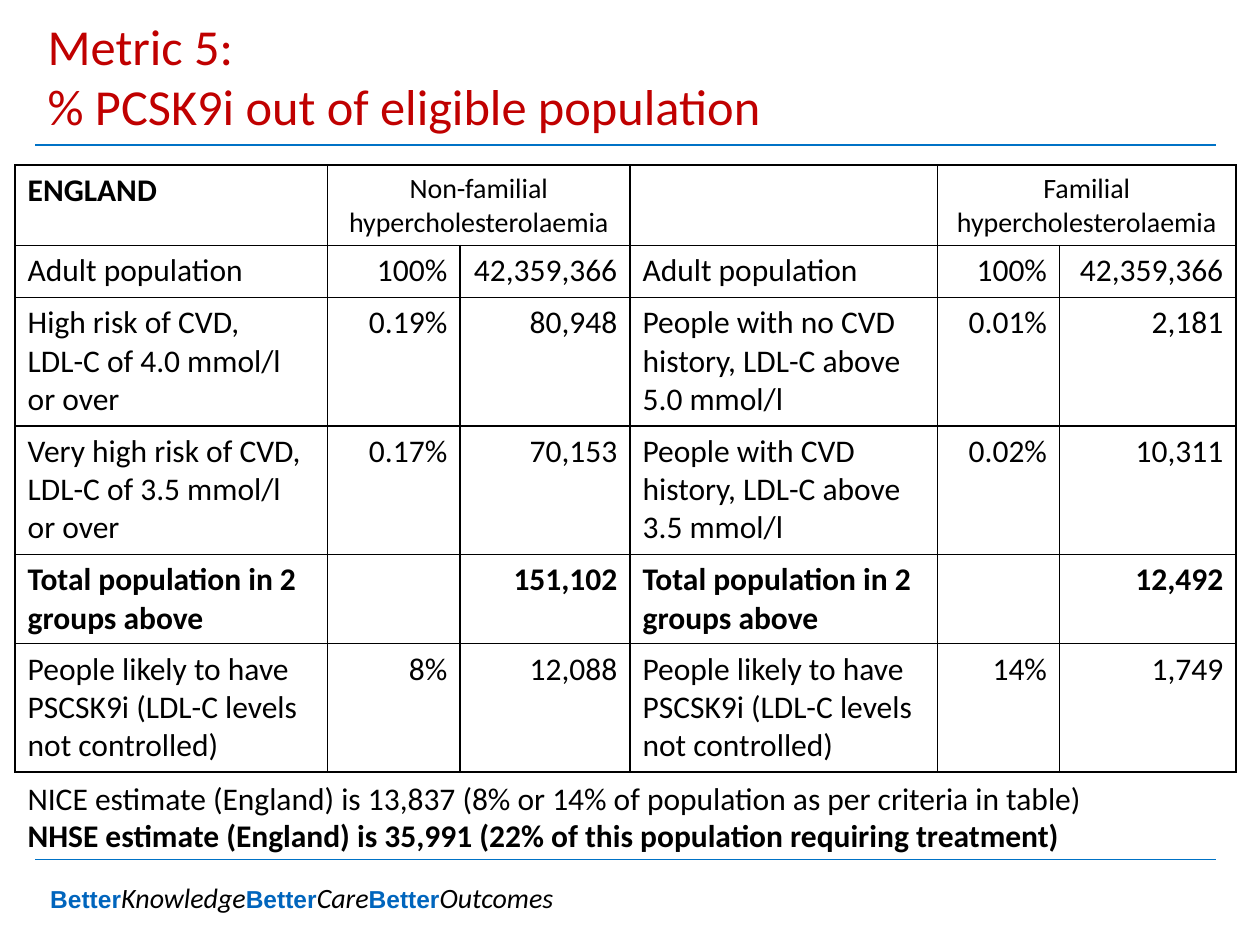
from dataclasses import dataclass

from lxml import etree
from pptx import Presentation
from pptx.dml.color import RGBColor
from pptx.enum.shapes import MSO_CONNECTOR, MSO_SHAPE
from pptx.enum.text import MSO_ANCHOR, PP_ALIGN
from pptx.oxml.ns import qn
from pptx.util import Inches, Pt

LEFT, CENTER, RIGHT = PP_ALIGN.LEFT, PP_ALIGN.CENTER, PP_ALIGN.RIGHT
TOP, MIDDLE = MSO_ANCHOR.TOP, MSO_ANCHOR.MIDDLE
STRAIGHT = MSO_CONNECTOR.STRAIGHT
RECTANGLE = MSO_SHAPE.RECTANGLE

BLACK = RGBColor(0x00, 0x00, 0x00)
WHITE = RGBColor(0xFF, 0xFF, 0xFF)
RED = RGBColor(0xC0, 0x00, 0x00)
RULE_BLUE = RGBColor(0x00, 0x72, 0xC6)
BRAND_BLUE = RGBColor(0x00, 0x65, 0xBD)

BODY = {"name": "Calibri", "size": Pt(18), "bold": False}
BOLD = BODY | {"bold": True}
HEADING = BODY | {"size": Pt(16)}
TITLE = BODY | {"size": Pt(28.8)}
STRONG_WORD = {"name": "Arial", "size": Pt(14), "bold": True}
LIGHT_WORD = HEADING | {"italic": True}


@dataclass
class Row:
    height: float
    texts: tuple[str, ...]
    style: dict


COLUMN_WIDTHS = (2.48, 1.05, 1.35, 2.44, 0.97, 1.4)
COLUMN_ALIGNS = (LEFT, RIGHT, RIGHT) * 2
LIKELY = "People likely to have PSCSK9i (LDL-C levels not controlled)"
TOTAL = "Total population in 2 groups above"
ADULTS = ("Adult population", "100%", "42,359,366")
ROWS = (
    Row(0.64, ("ENGLAND", "Non-familial hypercholesterolaemia", "",
               "", "Familial hypercholesterolaemia", ""), HEADING),
    Row(0.41, ADULTS * 2, BODY),
    Row(1.02, ("High risk of CVD,\nLDL-C of 4.0 mmol/l or over", "0.19%", "80,948",
               "People with no CVD history, LDL-C above 5.0 mmol/l", "0.01%", "2,181"), BODY),
    Row(1.02, ("Very high risk of CVD,\nLDL-C of 3.5 mmol/l or over", "0.17%", "70,153",
               "People with CVD history, LDL-C above 3.5 mmol/l", "0.02%", "10,311"), BODY),
    Row(0.71, (TOTAL, "", "151,102", TOTAL, "", "12,492"), BOLD),
    Row(1.02, (LIKELY, "8%", "12,088", LIKELY, "14%", "1,749"), BODY),
)
NOTES = (
    ("NICE estimate (England) is 13,837 (8% or 14% of population as per criteria in table)", BODY),
    ("NHSE estimate (England) is 35,991 (22% of this population requiring treatment)", BOLD),
)


def format_run(r, style: dict, color: RGBColor = BLACK) -> None:
    for name, value in style.items():
        setattr(r.font, name, value)
    r.font.color.rgb = color


def format_paragraph(p, style: dict, color: RGBColor = BLACK, align=LEFT) -> None:
    p.alignment = align
    for r in p.runs:
        format_run(r, style, color)


def add_text_box(s, left: float, top: float, width: float, height: float, anchor=TOP):
    sp = s.shapes.add_textbox(Inches(left), Inches(top), Inches(width), Inches(height))
    tf = sp.text_frame
    tf.word_wrap = True
    tf.vertical_anchor = anchor
    return tf


def add_rule(s, y: float) -> None:
    line = s.shapes.add_connector(STRAIGHT, Inches(0.28), Inches(y), Inches(9.65), Inches(y))
    line.line.color.rgb = RULE_BLUE
    line.line.width = Pt(0.75)
    etree.SubElement(line._element.spPr, qn("a:effectLst"))


def add_borders(cell) -> None:
    tc_pr = cell._tc.get_or_add_tcPr()
    for i, side in enumerate(("lnL", "lnR", "lnT", "lnB")):
        ln = etree.Element(qn(f"a:{side}"), w=str(Pt(1)))
        fill = etree.SubElement(ln, qn("a:solidFill"))
        etree.SubElement(fill, qn("a:srgbClr"), val=str(BLACK))
        tc_pr.insert(i, ln)


def add_population_table(s) -> None:
    sp = s.shapes.add_table(
        len(ROWS), len(COLUMN_WIDTHS), Inches(0.12), Inches(1.31),
        Inches(sum(COLUMN_WIDTHS)), Inches(sum(row.height for row in ROWS)))
    table = sp.table
    table.first_row = table.horz_banding = False
    for column, width in zip(table.columns, COLUMN_WIDTHS):
        column.width = Inches(width)
    for i, row in enumerate(ROWS):
        table.rows[i].height = Inches(row.height)
        for j, text in enumerate(row.texts):
            cell = table.cell(i, j)
            cell.fill.background()
            add_borders(cell)
            cell.text = text
            align = CENTER if i == 0 and j else COLUMN_ALIGNS[j]
            style = BOLD if i == j == 0 else row.style
            for p in cell.text_frame.paragraphs:
                format_paragraph(p, style, align=align)
    for j in (1, 4):
        table.cell(0, j).merge(table.cell(0, j + 1))


def add_tagline(s) -> None:
    sp = s.shapes.add_shape(RECTANGLE, Inches(0.3), Inches(6.9), Inches(4.31), Inches(0.41))
    sp.shadow.inherit = False
    sp.fill.solid()
    sp.fill.fore_color.rgb = WHITE
    sp.line.fill.background()
    tf = sp.text_frame
    tf.word_wrap = True
    tf.vertical_anchor = TOP
    p = tf.paragraphs[0]
    p.alignment = LEFT
    p.line_spacing = 1.15
    for word in ("Knowledge", "Care", "Outcomes"):
        for text, style, color in (("Better", STRONG_WORD, BRAND_BLUE), (word, LIGHT_WORD, BLACK)):
            r = p.add_run()
            r.text = text
            format_run(r, style, color)


def main() -> None:
    prs = Presentation()
    prs.slide_width, prs.slide_height = Inches(10), Inches(7.5)
    s = prs.slides.add_slide(prs.slide_layouts[6])

    add_tagline(s)
    for y in (1.15, 6.82):
        add_rule(s, y)

    p = add_text_box(s, 0.28, 0.13, 6.38, 0.94, MIDDLE).paragraphs[0]
    p.text = "Metric 5: \v% PCSK9i out of eligible population"
    format_paragraph(p, TITLE, RED)

    add_population_table(s)

    tf = add_text_box(s, 0.12, 6.13, 9.69, 0.71)
    tf.text = "\n".join(text for text, _ in NOTES)
    for p, (_, style) in zip(tf.paragraphs, NOTES):
        format_paragraph(p, style)

    prs.save("out.pptx")


if __name__ == "__main__":
    main()
